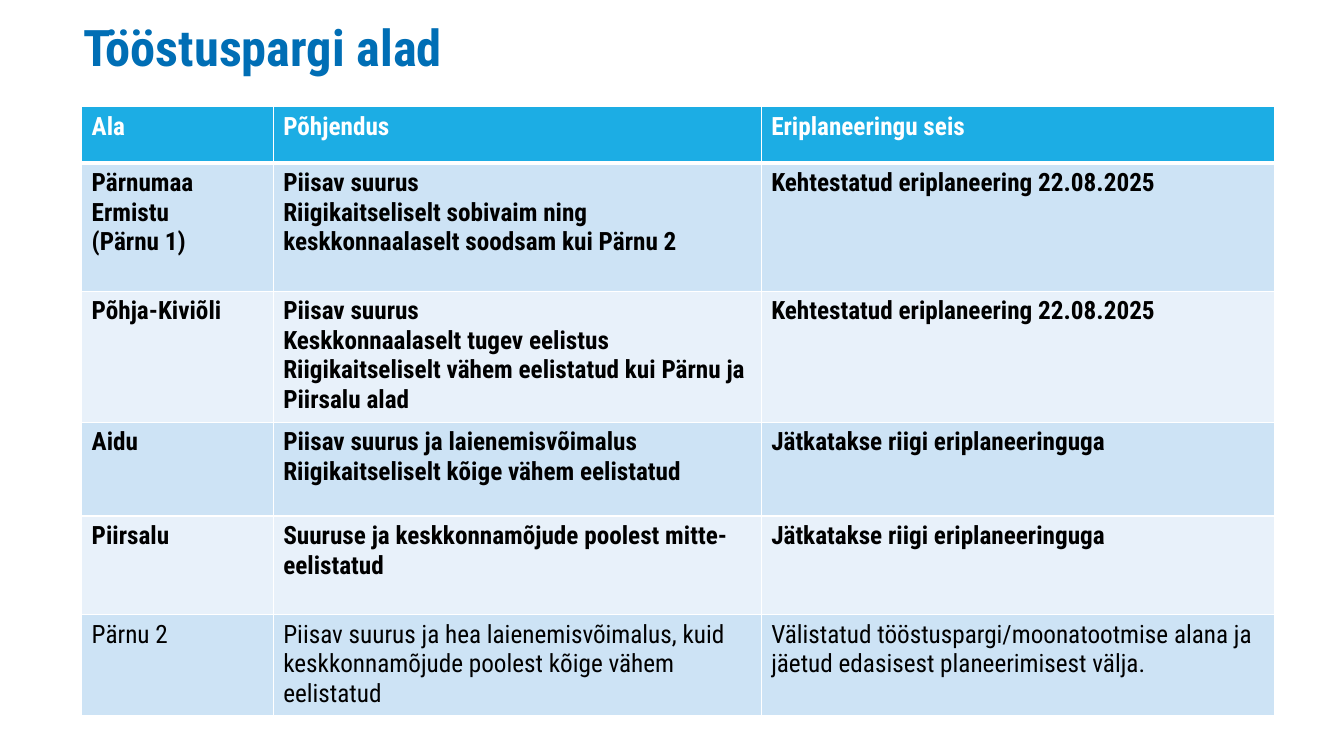
"""Build the slide that compares the industrial park areas."""
from lxml import etree
from pptx import Presentation, util as u
from pptx.dml import color
from pptx.enum import text
from pptx.oxml import ns

ROWS = [
    (0.56, [["Ala"], ["Põhjendus"], ["Eriplaneeringu seis"]]),
    (1.27, [["Pärnumaa Ermistu", "(Pärnu 1)"],
            ["Piisav suurus",
             "Riigikaitseliselt sobivaim ning keskkonnaalaselt soodsam kui Pärnu 2"],
            ["Kehtestatud eriplaneering 22.08.2025"]]),
    (1.27, [["Põhja-Kiviõli"],
            ["Piisav suurus", "Keskkonnaalaselt tugev eelistus",
             "Riigikaitseliselt vähem eelistatud kui Pärnu ja Piirsalu alad"],
            ["Kehtestatud eriplaneering 22.08.2025"]]),
    (0.93, [["Aidu"],
            ["Piisav suurus ja laienemisvõimalus",
             "Riigikaitseliselt kõige vähem eelistatud"],
            ["Jätkatakse riigi eriplaneeringuga"]]),
    (0.98, [["Piirsalu"],
            ["Suuruse ja keskkonnamõjude poolest mitte-eelistatud"],
            ["Jätkatakse riigi eriplaneeringuga"]]),
    (0.98, [["Pärnu 2"],
            ["Piisav suurus ja hea laienemisvõimalus, kuid",
             "keskkonnamõjude poolest kõige vähem eelistatud"],
            ["Välistatud tööstuspargi/moonatootmise alana ja "
             "jäetud edasisest planeerimisest välja."]]),
]
COLUMNS = [1.9, 4.84, 5.09]


def rgb(value):
    return color.RGBColor.from_string(value)


class SlideBuilder:
    font = "Roboto Condensed"
    blue = "006EB5"
    header = "1CADE4"
    bands = ("E8F1FA", "CDE3F5")
    white = "FFFFFF"
    black = "000000"

    def __init__(self, presentation):
        self.slide = presentation.slides.add_slide(presentation.slide_layouts[6])

    def add_lines(self, frame, lines, size, ink, bold=True):
        for index, line in enumerate(lines):
            paragraph = frame.add_paragraph() if index else frame.paragraphs[0]
            run = paragraph.add_run()
            run.text = line
            run.font.name = self.font
            run.font.size = u.Pt(size)
            run.font.bold = bold
            run.font.color.rgb = rgb(ink)

    def title(self, line, left, top, width, height):
        shape = self.slide.shapes.add_textbox(
            *map(u.Inches, (left, top, width, height)))
        frame = shape.text_frame
        frame.word_wrap = True
        frame.vertical_anchor = text.MSO_ANCHOR.MIDDLE
        self.add_lines(frame, [line], 36, self.blue)
        frame.paragraphs[0].line_spacing = 0.9

    def borders(self, cell, widths):
        properties = cell._tc.get_or_add_tcPr()
        for side, width in zip("LRTB", widths):
            line = etree.SubElement(properties, ns.qn(f"a:ln{side}"), w=str(u.Pt(width)))
            fill = etree.SubElement(line, ns.qn("a:solidFill"))
            etree.SubElement(fill, ns.qn("a:srgbClr"), val=self.white)

    def table(self, rows, columns, left, top):
        height = sum(row_height for row_height, _ in rows)
        table = self.slide.shapes.add_table(
            len(rows), len(columns),
            *map(u.Inches, (left, top, sum(columns), height))).table
        for column, width in zip(table.columns, columns):
            column.width = u.Inches(width)
        last = len(rows) - 1
        for row, (row_height, cells) in enumerate(rows):
            table.rows[row].height = u.Inches(row_height)
            for column, lines in enumerate(cells):
                cell = table.cell(row, column)
                self.borders(cell, (1, 1, 3 if row == 1 else 1, 3 if row == 0 else 1))
                cell.fill.solid()
                cell.fill.fore_color.rgb = rgb(self.bands[row % 2] if row else self.header)
                ink = self.black if row else self.white
                self.add_lines(cell.text_frame, lines, 18, ink, row != last)


def main():
    presentation = Presentation()
    presentation.slide_width = u.Inches(13.33)
    presentation.slide_height = u.Inches(7.5)
    builder = SlideBuilder(presentation)
    builder.title("Tööstuspargi alad", 0.73, -0.09, 7.95, 1.18)
    builder.table(ROWS, COLUMNS, 0.81, 1.06)
    presentation.save("out.pptx")


if __name__ == "__main__":
    main()
